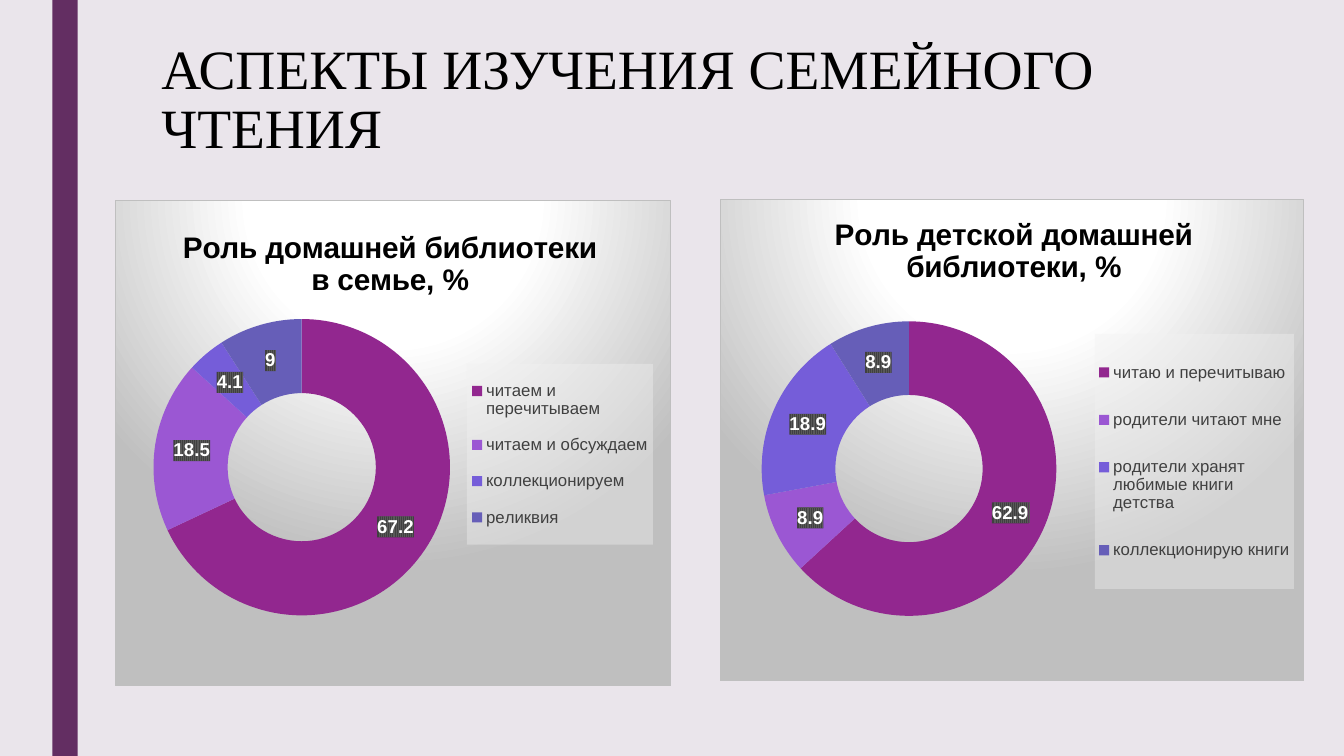
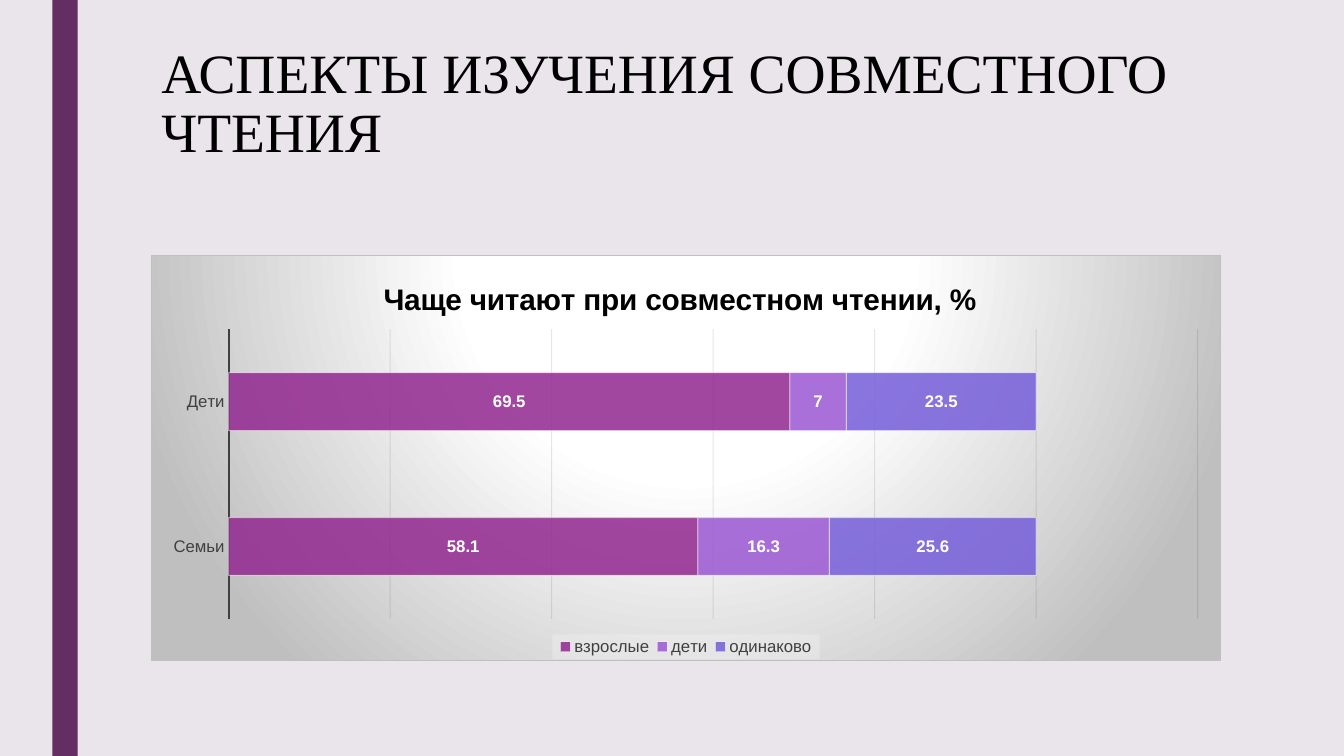
from lxml import etree
from pptx import Presentation
from pptx.chart.data import CategoryChartData
from pptx.dml.color import RGBColor
from pptx.enum.chart import XL_CHART_TYPE, XL_LABEL_POSITION, XL_LEGEND_POSITION, XL_TICK_MARK
from pptx.enum.shapes import MSO_SHAPE
from pptx.enum.text import MSO_ANCHOR, PP_ALIGN
from pptx.oxml import parse_xml
from pptx.oxml.ns import nsdecls, qn
from pptx.util import Inches, Pt

DOUGHNUT = XL_CHART_TYPE.DOUGHNUT
BAR = XL_CHART_TYPE.BAR_STACKED
RIGHT, BOTTOM = XL_LEGEND_POSITION.RIGHT, XL_LEGEND_POSITION.BOTTOM
CENTER = XL_LABEL_POSITION.CENTER
NO_TICK = XL_TICK_MARK.NONE

HEX = {
    "background": "EAE5EB", "band": "632E62", "text": "000000", "muted": "404040",
    "white": "FFFFFF", "edge": "BFBFBF", "grid": "0D0D0D", "legend": "F2F2F2", "stripe": "595959",
}
RGB = {name: RGBColor.from_string(value) for name, value in HEX.items()}
SERIES = [RGBColor.from_string(c) for c in ("92278F", "9B57D3", "755DD9", "665EB8")]

CHART_FILL = f"""<a:gradFill><a:gsLst>
<a:gs pos="0"><a:srgbClr val="{HEX['white']}"/></a:gs>
<a:gs pos="39000"><a:srgbClr val="{HEX['white']}"/></a:gs>
<a:gs pos="100000"><a:srgbClr val="{HEX['edge']}"/></a:gs></a:gsLst>
<a:path path="circle"><a:fillToRect l="50000" t="-80000" r="50000" b="180000"/></a:path></a:gradFill>
<a:ln w="9525"><a:solidFill><a:srgbClr val="{HEX['edge']}"/></a:solidFill></a:ln>"""
LEGEND_FILL = f"""<a:solidFill><a:srgbClr val="{HEX['legend']}">
<a:alpha val="39000"/></a:srgbClr></a:solidFill>"""
LABEL_FILL = f"""<a:pattFill prst="narVert"><a:fgClr><a:srgbClr val="{HEX['stripe']}"/></a:fgClr>
<a:bgClr><a:srgbClr val="{HEX['muted']}"/></a:bgClr></a:pattFill>"""

# Boxes are left, top, width, height in percent of the slide;
# plot, legend and heading places are in percent of the chart.
SLIDES = [
    {"title": "АСПЕКТЫ ИЗУЧЕНИЯ СЕМЕЙНОГО ЧТЕНИЯ", "top": 4.93, "charts": [
        {"kind": DOUGHNUT, "box": (8.55, 26.4, 41.4, 64.4),
         "heading": "Роль домашней библиотеки в семье, %", "heading_at": (11.2, 4.7),
         "plot": (6, 24.5, 55.1, 61), "legend": (63.3, 33.7, 33.5, 37.2),
         "cats": ["читаем и перечитываем", "читаем и обсуждаем", "коллекционируем", "реликвия"],
         "series": {"Series 1": (67.2, 18.5, 4.1, 9)}},
        {"kind": DOUGHNUT, "box": (53.55, 26.27, 43.5, 63.87),
         "heading": "Роль детской домашней библиотеки, %", "heading_at": (18.7, 2.3),
         "plot": (7.1, 24.2, 50.5, 63.5), "legend": (64.2, 28, 34.1, 52.9),
         "cats": ["читаю и перечитываю", "родители читают мне",
                  "родители хранят любимые книги детства", "коллекционирую книги"],
         "series": {"Series 1": (62.9, 8.9, 18.9, 8.9)}},
    ]},
    {"title": "АСПЕКТЫ ИЗУЧЕНИЯ СОВМЕСТНОГО ЧТЕНИЯ", "top": 5.47, "charts": [
        {"kind": BAR, "box": (11.25, 33.73, 79.58, 53.73),
         "heading": "Чаще читают при совместном чтении, %", "heading_at": (21.2, 5),
         "plot": (7.2, 18.2, 90.7, 71.5), "legend": (37.5, 93.5, 25, 6.2),
         "cats": ["Семьи", "Дети"],
         "series": {"взрослые": (58.1, 69.5), "дети": (16.3, 7), "одинаково": (25.6, 23.5)}},
    ]},
]


def shape_properties(content):
    return parse_xml(f"<c:spPr {nsdecls('c', 'a')}>{content}</c:spPr>")


def place(element, index, position):
    """Give a chart part a fixed layout, as its child number index."""
    for old in element.xpath("c:layout"):
        element.remove(old)
    target = '<c:layoutTarget val="inner"/>' if element.tag == qn("c:plotArea") else ""
    modes = '<c:xMode val="edge"/><c:yMode val="edge"/>'
    values = "".join(f'<c:{k} val="{v / 100:.4f}"/>' for k, v in zip("xywh", position))
    element.insert(index, parse_xml(
        f"<c:layout {nsdecls('c')}><c:manualLayout>{target}{modes}{values}</c:manualLayout></c:layout>"))


prs = Presentation()
prs.slide_width, prs.slide_height = Inches(13.33), Inches(7.5)
W, H = prs.slide_width / 100, prs.slide_height / 100
fill = prs.slide_master.background.fill
fill.solid()
fill.fore_color.rgb = RGB["background"]
layout = prs.slide_layouts[5]

for number, page in enumerate(SLIDES):
    slide = prs.slides.add_slide(layout)
    if number == 0:
        # The band belongs to the master, behind everything else.
        band = slide.shapes.add_shape(MSO_SHAPE.RECTANGLE, int(3.9 * W), 0, int(1.88 * W), prs.slide_height)
        band.shadow.inherit = False
        band.fill.solid()
        band.fill.fore_color.rgb = RGB["band"]
        band.line.fill.background()
        prs.slide_master.shapes.element.insert(2, band.element)

    title = slide.shapes.title
    title.left, title.top = int(11.25 * W), int(page["top"] * H)
    title.width, title.height = int(82.45 * W), int((21.2 - page["top"]) * H)
    tf = title.text_frame
    tf.text = page["title"]
    tf.word_wrap = True
    tf.vertical_anchor = MSO_ANCHOR.TOP
    p = tf.paragraphs[0]
    p.alignment, p.line_spacing = PP_ALIGN.LEFT, 0.89
    p.font.name, p.font.size = "Times New Roman", Pt(39.6)
    p.font.color.rgb = RGB["text"]

    for item in page["charts"]:
        data = CategoryChartData()
        data.categories = item["cats"]
        for name, values in item["series"].items():
            data.add_series(name, values)
        x, y, w, h = item["box"]
        chart = slide.shapes.add_chart(
            item["kind"], int(x * W), int(y * H), int(w * W), int(h * H), data).chart
        root = chart.element
        chart.font.name, chart.font.size = "Arial", Pt(10)
        chart.font.color.rgb = RGB["text"]
        root.xpath("c:chart")[0].addnext(shape_properties(CHART_FILL))
        place(root.xpath("c:chart/c:plotArea")[0], 0, item["plot"])

        chart.has_title = True
        tf = chart.chart_title.text_frame
        tf.text = item["heading"]
        font = tf.paragraphs[0].font
        font.name, font.size, font.bold = "Arial", Pt(21.3), True
        font.color.rgb = RGB["text"]
        place(root.xpath("c:chart/c:title")[0], 1, item["heading_at"])

        is_bar = item["kind"] == BAR
        chart.has_legend = True
        chart.legend.position = BOTTOM if is_bar else RIGHT
        chart.legend.include_in_layout = False
        chart.legend.font.name, chart.legend.font.size = "Arial", Pt(12)
        chart.legend.font.color.rgb = RGB["muted"]
        legend = root.xpath("c:chart/c:legend")[0]
        place(legend, 1, item["legend"])
        legend.xpath("c:txPr")[0].addprevious(shape_properties(LEGEND_FILL))

        plot = chart.plots[0]
        plot.vary_by_categories = not is_bar
        plot.has_data_labels = True
        labels = plot.data_labels
        labels.show_value, labels.show_percentage = True, False
        labels.font.name, labels.font.bold = "Arial", True
        labels.font.size = Pt(12 if is_bar else 13.3)
        labels.font.color.rgb = RGB["white"]

        if not is_bar:
            root.xpath(".//c:dLbls/c:txPr")[0].addprevious(shape_properties(LABEL_FILL))
            for i, color in enumerate(SERIES):
                fmt = plot.series[0].points[i].format
                fmt.fill.solid()
                fmt.fill.fore_color.rgb = color
                fmt.line.fill.background()
            continue

        labels.position = CENTER
        plot.gap_width, plot.overlap = 150, 100
        for series, color in zip(plot.series, SERIES):
            series.format.fill.solid()
            series.format.fill.fore_color.rgb = color
            series.format.line.width = Pt(0.75)
            series.format.line.color.rgb = RGB["white"]
        axis = chart.category_axis
        axis.major_tick_mark = axis.minor_tick_mark = NO_TICK
        axis.tick_labels.font.name, axis.tick_labels.font.size = "Arial", Pt(12)
        axis.tick_labels.font.color.rgb = RGB["muted"]
        axis.format.line.width = Pt(1.5)
        axis.format.line.color.rgb = RGB["muted"]
        axis = chart.value_axis
        axis.visible = False
        axis.minimum_scale, axis.maximum_scale, axis.major_unit = 0, 120, 20
        axis.has_major_gridlines = True
        axis.major_gridlines.format.line.width = Pt(0.75)
        axis.major_gridlines.format.line.color.rgb = RGB["grid"]
        for path, opacity in (("c:ser/c:spPr/a:solidFill", 85), ("c:ser/c:spPr/a:ln/a:solidFill", 50),
                              ("c:majorGridlines/c:spPr/a:ln/a:solidFill", 10)):
            for color in root.xpath(f".//{path}/a:srgbClr"):
                etree.SubElement(color, qn("a:alpha"), val=str(opacity * 1000))

prs.save("out.pptx")
